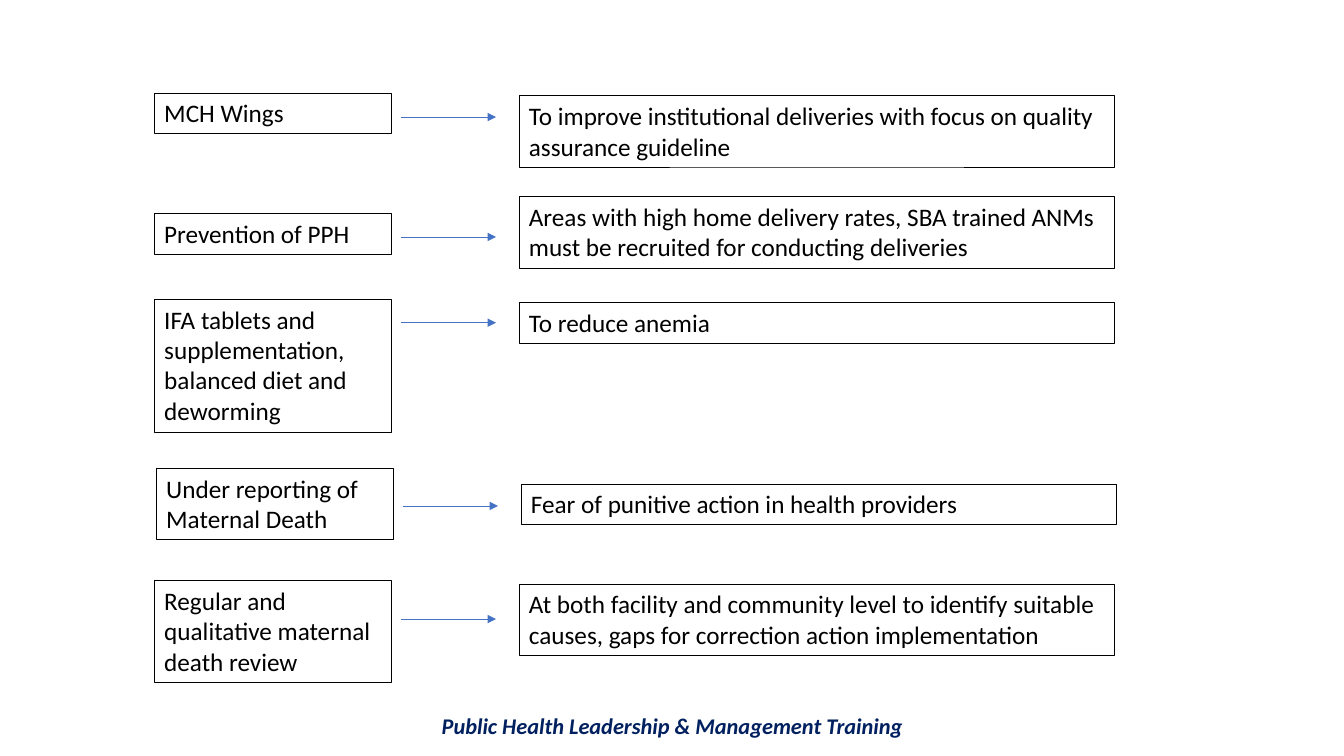
import pptx
import pptx.util
import pptx.dml.color
import pptx.enum.shapes
import pptx.enum.text
import pptx.oxml
import pptx.oxml.ns

Cm = pptx.util.Cm
Pt = pptx.util.Pt

FOOTER = "Public Health Leadership & Management Training"
ROWS = [
    {"topic": ("MCH Wings", 2.34, 1),
     "aim": ("To improve institutional deliveries with focus on quality assurance guideline", 2.41, 2),
     "arrow": 2.95, "shift": 0},
    {"topic": ("Prevention of PPH", 5.38, 1),
     "aim": ("Areas with high home delivery rates, SBA trained ANMs must be recruited for conducting deliveries", 4.95, 2),
     "arrow": 5.97, "shift": 0},
    {"topic": ("IFA tablets and supplementation, balanced diet and deworming", 7.54, 4),
     "aim": ("To reduce anemia", 7.62, 1),
     "arrow": 8.13, "shift": 0},
    {"topic": ("Under reporting of Maternal Death", 11.79, 2),
     "aim": ("Fear of punitive action in health providers", 12.19, 1),
     "arrow": 12.75, "shift": 0.05},
    {"topic": ("Regular and qualitative maternal death review", 14.63, 3),
     "aim": ("At both facility and community level to identify suitable causes, gaps for correction action implementation", 14.71, 2),
     "arrow": 15.6, "shift": 0},
]
COLORS = {"text": "000000", "arrow": "4472C4", "footer": "002060"}
FONT = "Calibri"
TOPIC = (3.89, 5.97)
ARROW = (10.11, 2.39)
AIM = (13.08, 15.01)
PAD, LINE = 0.26, 0.77


def color(name):
    return pptx.dml.color.RGBColor.from_string(COLORS[name])


def write(shape, text, size, tint, align, bold=False):
    frame = shape.text_frame
    frame.word_wrap = True
    para = frame.paragraphs[0]
    para.alignment = align
    run = para.add_run()
    run.text = text
    run.font.name = FONT
    run.font.size = Pt(size)
    run.font.bold = run.font.italic = bold
    run.font.color.rgb = color(tint)


def add_box(slide, item, column, shift):
    text, top, lines = item
    left, width = column
    box = slide.shapes.add_shape(
        pptx.enum.shapes.MSO_SHAPE.RECTANGLE,
        Cm(left + shift), Cm(top), Cm(width), Cm(PAD + LINE * lines))
    box.shadow.inherit = False
    box.fill.background()
    box.line.color.rgb = color("text")
    box.line.width = Pt(0.25)
    box.text_frame.vertical_anchor = pptx.enum.text.MSO_ANCHOR.TOP
    write(box, text, 18, "text", pptx.enum.text.PP_ALIGN.LEFT)


def add_arrow(slide, top, shift):
    left, width = ARROW
    arrow = slide.shapes.add_connector(
        pptx.enum.shapes.MSO_CONNECTOR.STRAIGHT,
        Cm(left + shift), Cm(top), Cm(left + shift + width), Cm(top))
    arrow.line.color.rgb = color("arrow")
    arrow.line.width = Pt(0.5)
    tail = pptx.oxml.parse_xml(
        f'<a:tailEnd {pptx.oxml.ns.nsdecls("a")} type="triangle"/>')
    arrow.line._get_or_add_ln().append(tail)
    flat = pptx.oxml.parse_xml(f'<a:effectLst {pptx.oxml.ns.nsdecls("a")}/>')
    arrow._element.spPr.append(flat)


def main():
    deck = pptx.Presentation()
    deck.slide_width, deck.slide_height = Cm(33.87), Cm(19.05)
    slide = deck.slides.add_slide(deck.slide_layouts[6])
    foot = slide.shapes.add_textbox(Cm(2.34), Cm(17.83), Cm(29.21), Cm(0.94))
    write(foot, FOOTER, 16, "footer", pptx.enum.text.PP_ALIGN.CENTER, True)
    for row in ROWS:
        add_box(slide, row["topic"], TOPIC, row["shift"])
        add_arrow(slide, row["arrow"], row["shift"])
        add_box(slide, row["aim"], AIM, row["shift"])
    deck.save("out.pptx")


if __name__ == "__main__":
    main()
